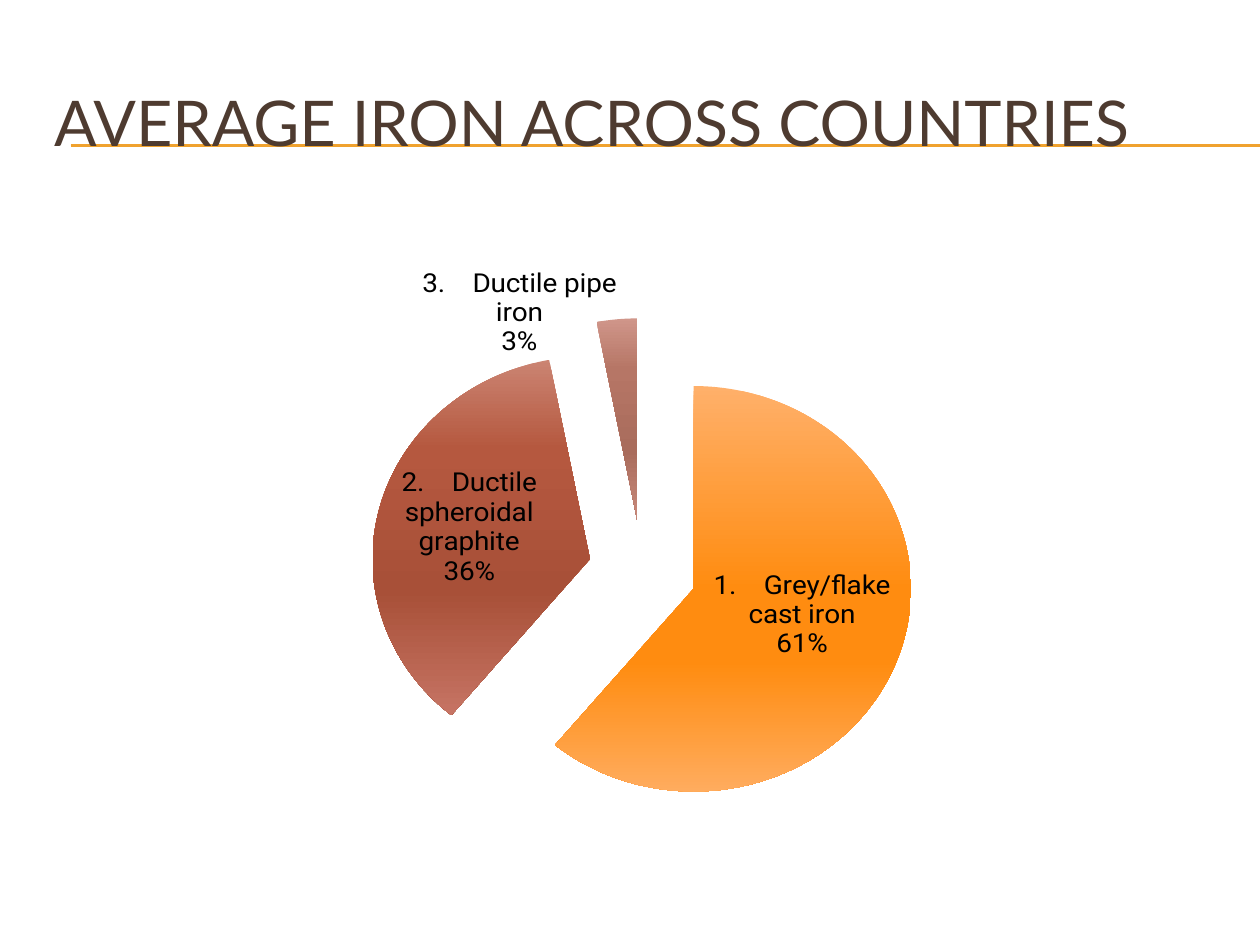
import copy

import pptx
import pptx.chart.data
import pptx.dml.color
import pptx.enum.chart
import pptx.enum.shapes
import pptx.enum.text
import pptx.oxml.ns
import pptx.oxml.xmlchemy
import pptx.util

WIDTH, HEIGHT = 10, 7.5
GAP = "\N{NO-BREAK SPACE}" * 3 + " "
# label, share, gradient from top to bottom as (position, colour)
SLICES = [
    (f"1.{GAP}Grey/flake cast iron", 61,
     [(0, "FFB06A"), (0.5, "FF8C10"), (0.68, "FF8C10"), (1, "FFAC5E")]),
    (f"2.{GAP}Ductile spheroidal graphite", 36,
     [(0, "CB8472"), (0.25, "B5583F"), (0.65, "A85038"), (1, "C67464")]),
    (f"3.{GAP}Ductile pipe iron", 3,
     [(0, "D0968A"), (0.25, "B67666"), (0.65, "A96C5C"), (1, "C98A7C")]),
]


def rgb(value):
    return pptx.dml.color.RGBColor.from_string(value)


def inches(*values):
    return [pptx.util.Inches(v) for v in values]


def element(tag, val=None):
    """Make an XML element, with a val attribute if one is given."""
    el = pptx.oxml.xmlchemy.OxmlElement(tag)
    if val is not None:
        el.set("val", str(val))
    return el


def set_font(font, name, size, color):
    font.name, font.size = name, pptx.util.Pt(size)
    font.color.rgb = rgb(color)


def add_rule(slide, y):
    line = slide.shapes.add_connector(
        pptx.enum.shapes.MSO_CONNECTOR.STRAIGHT, *inches(0.56, y, WIDTH, y))
    line.line.color.rgb = rgb("F0A22E")
    line.line.width = pptx.util.Pt(0.75)
    line._element.spPr.append(element("a:effectLst"))


def set_title(slide, text):
    title = slide.shapes.title
    title.left, title.top, title.width, title.height = inches(0.33, 0.5, 9.5, 0.92)
    tf = title.text_frame
    tf.text = text
    tf.vertical_anchor = pptx.enum.text.MSO_ANCHOR.MIDDLE
    p = tf.paragraphs[0]
    p.alignment = pptx.enum.text.PP_ALIGN.LEFT
    set_font(p.runs[0].font, "Lato", 36, "4E3B30")
    # keep the title in front of the rules
    slide.shapes._spTree.append(title._element)


def fill_gradient(point, stops):
    fmt = point.format
    fmt.fill.gradient()
    fmt.fill.gradient_angle = 270
    gs_list = next(fmt._element.iter(pptx.oxml.ns.qn("a:gsLst")))
    while len(gs_list) < len(stops):
        gs_list.append(copy.deepcopy(gs_list[0]))
    for stop, (position, color) in zip(fmt.fill.gradient_stops, stops):
        stop.position = position
        stop.color.rgb = rgb(color)
    fmt.line.fill.background()


def set_plot_area(chart, **shares):
    """Place the inner plot area by shares of the chart's size."""
    plot_area = chart._chartSpace.chart.plotArea
    for old in plot_area.findall(pptx.oxml.ns.qn("c:layout")):
        plot_area.remove(old)
    layout, manual = element("c:layout"), element("c:manualLayout")
    layout.append(manual)
    values = dict(layoutTarget="inner", xMode="edge", yMode="edge", **shares)
    for tag, value in values.items():
        manual.append(element(f"c:{tag}", value))
    plot_area.insert(0, layout)


def explode(series, percent):
    first_point = series._element.find(pptx.oxml.ns.qn("c:dPt"))
    first_point.addprevious(element("c:explosion", percent))


def add_pie(slide):
    data = pptx.chart.data.CategoryChartData(number_format="0")
    data.categories = [label for label, _, _ in SLICES]
    data.add_series("Series 1", [share for _, share, _ in SLICES])
    chart = slide.shapes.add_chart(pptx.enum.chart.XL_CHART_TYPE.PIE,
                                   *inches(0.51, 1.78, 9, 5.26), data).chart
    chart.has_title = chart.has_legend = False
    set_font(chart.font, "Roboto", 16, "000000")
    set_plot_area(chart, x=0.09, y=0.08, w=0.84, h=0.82)

    plot = chart.plots[0]
    plot.vary_by_categories = True
    series = plot.series[0]
    for i, (_, _, stops) in enumerate(SLICES):
        fill_gradient(series.points[i], stops)
    explode(series, 25)

    plot.has_data_labels = True
    labels = plot.data_labels
    labels.show_category_name = labels.show_percentage = True
    labels.show_value = False
    labels.number_format, labels.number_format_is_linked = "0%", False
    labels.position = pptx.enum.chart.XL_LABEL_POSITION.BEST_FIT
    set_font(labels.font, "Roboto", 16, "000000")


def main():
    prs = pptx.Presentation()
    prs.slide_width, prs.slide_height = inches(WIDTH, HEIGHT)
    slide = prs.slides.add_slide(prs.slide_layouts[5])
    for y in (1.15, 1.16):
        add_rule(slide, y)
    set_title(slide, "AVERAGE IRON ACROSS COUNTRIES")
    add_pie(slide)
    prs.save("out.pptx")


if __name__ == "__main__":
    main()
